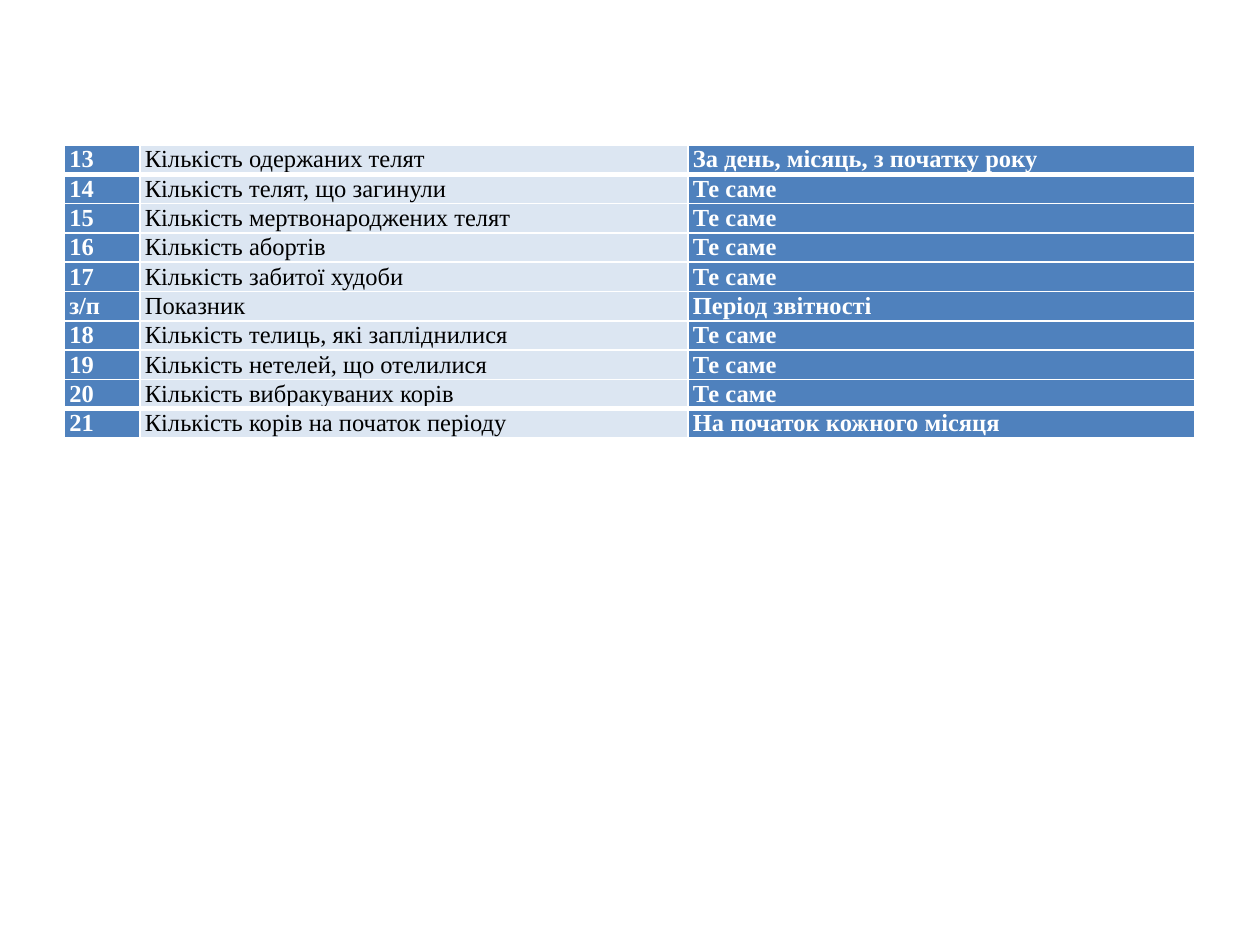
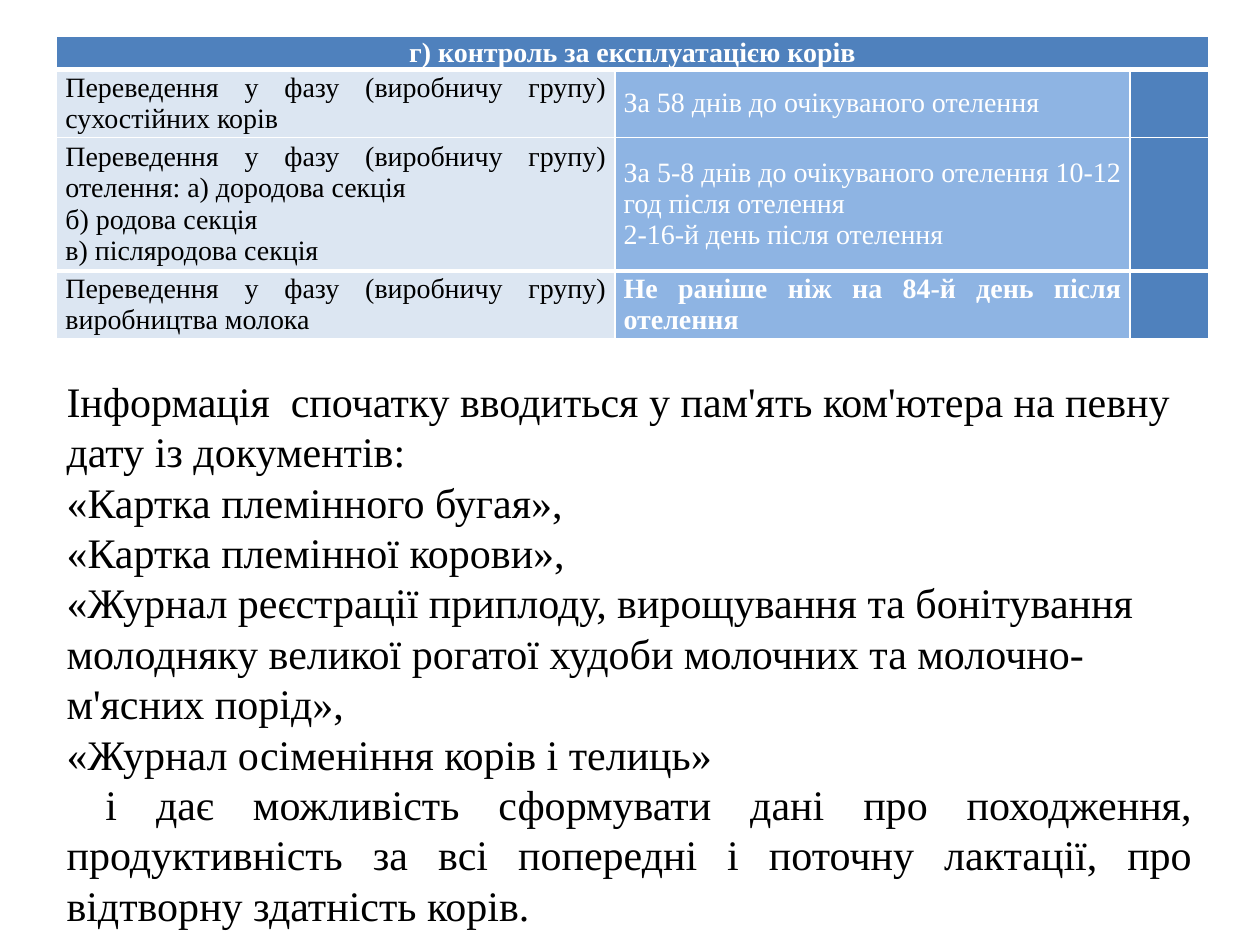
from lxml.etree import SubElement
from pptx import Presentation
from pptx.dml.color import RGBColor
from pptx.enum.text import MSO_ANCHOR, MSO_AUTO_SIZE, PP_ALIGN
from pptx.oxml.ns import qn
from pptx.util import Inches, Pt

# Shared look
FONT = "Times New Roman"
WHITE, BLACK = "FFFFFF", "000000"
BLUE, PALE, SKY = "4F81BD", "DCE6F2", "8EB4E3"
THIN, THICK = 1, 3


def write(frame, text, align, **formats):
    """Put each line of the text in its own paragraph."""
    color = RGBColor.from_string(formats.pop("color"))
    for index, line in enumerate(text.split("\n")):
        para = frame.paragraphs[0] if index == 0 else frame.add_paragraph()
        para.alignment = align
        span = para.add_run()
        span.text = line
        span.font.color.rgb = color
        for name, value in formats.items():
            setattr(span.font, name, value)


def add_grid(page, left, top, widths, heights, rows, fills, inset, size, is_bold):
    """Add a white-ruled table with thick rules below the first and above the last row."""
    table = page.shapes.add_table(
        len(rows), len(widths), Inches(left), Inches(top),
        Inches(sum(widths)), Inches(sum(heights))).table
    for column, width in zip(table.columns, widths):
        column.width = Inches(width)
    for row, height in zip(table.rows, heights):
        row.height = Inches(height)
    last = len(rows) - 1
    for r, texts in enumerate(rows):
        for c, text in enumerate(texts):
            cell = table.cell(r, c)
            layout = {"vertical_anchor": MSO_ANCHOR.MIDDLE,
                      "margin_left": Inches(inset), "margin_right": Inches(inset),
                      "margin_top": 0, "margin_bottom": 0}
            for name, value in layout.items():
                setattr(cell, name, value)
            fill = fills(r, c)
            cell.fill.solid()
            cell.fill.fore_color.rgb = RGBColor.from_string(fill)
            if text:
                write(cell.text_frame, text, PP_ALIGN.JUSTIFY, name=FONT, size=Pt(size),
                      bold=is_bold(r, c), color=BLACK if fill == PALE else WHITE)
            # Cell borders stand before the fill
            properties = cell._tc.get_or_add_tcPr()
            borders = {"a:lnL": THIN, "a:lnR": THIN,
                       "a:lnT": THICK if r in (1, last) else THIN,
                       "a:lnB": THICK if r in (0, last - 1) else THIN}
            for position, (tag, width) in enumerate(borders.items()):
                line = SubElement(properties, qn(tag), w=str(Pt(width)))
                solid = SubElement(line, qn("a:solidFill"))
                SubElement(solid, qn("a:srgbClr"), val=WHITE)
                properties.insert(position, line)
    return table


deck = Presentation()
deck.slide_width, deck.slide_height = Inches(10), Inches(7.5)
blank = deck.slide_layouts[6]

# Slide 1: reporting indicators
page = deck.slides.add_slide(blank)
SAME = "Те саме"
indicators = [
    ("13", "Кількість одержаних телят", "За день, місяць, з початку року"),
    ("14", "Кількість телят, що загинули", SAME),
    ("15", "Кількість мертвонароджених телят", SAME),
    ("16", "Кількість абортів", SAME),
    ("17", "Кількість забитої худоби", SAME),
    ("з/п", "Показник", "Період звітності"),
    ("18", "Кількість телиць, які запліднилися", SAME),
    ("19", "Кількість нетелей, що отелилися", SAME),
    ("20", "Кількість вибракуваних корів", SAME),
    ("21", "Кількість корів на початок періоду", "На початок кожного місяця"),
]
add_grid(page, 0.51, 1.15, [0.6, 4.35, 4.02], [2.33 / len(indicators)] * len(indicators),
         indicators, lambda r, c: PALE if c == 1 else BLUE, 0.04, 14,
         lambda r, c: c != 1)

# Slide 2: control of cow use
page = deck.slides.add_slide(blank)
PHASE = "Переведення у фазу (виробничу групу) "
phases = [
    ("г) контроль за експлуатацією корів", "", ""),
    (PHASE + "сухостійних корів", "За 58 днів до очікуваного отелення", ""),
    (PHASE + "отелення: а) дородова секція\nб) родова секція\nв) післяродова секція",
     "За 5-8 днів до очікуваного отелення 10-12 год після отелення\n"
     "2-16-й день після отелення", ""),
    (PHASE + "виробництва молока", "Не раніше ніж на 84-й день після отелення", ""),
]
table = add_grid(page, 0.45, 0.29, [4.43, 4.09, 0.62], [0.26, 0.54, 1.06, 0.54], phases,
                 lambda r, c: BLUE if r == 0 else (PALE, SKY, BLUE)[c], 0.07, 16,
                 lambda r, c: (r, c) in ((0, 0), (3, 1)))
heading = table.cell(0, 0)
heading.merge(table.cell(0, 2))
heading.text_frame.paragraphs[0].alignment = PP_ALIGN.CENTER

# Source documents below the table
box = page.shapes.add_textbox(Inches(0.43), Inches(2.93), Inches(9.13), Inches(4.54))
frame = box.text_frame
frame.word_wrap = True
frame.auto_size = MSO_AUTO_SIZE.SHAPE_TO_FIT_TEXT
documents = """Інформація  спочатку вводиться у пам'ять ком'ютера на певну дату із документів:
«Картка племінного бугая»,
«Картка племінної корови»,
«Журнал реєстрації приплоду, вирощування та бонітування молодняку великої рогатої худоби молочних та молочно-м'ясних порід»,
«Журнал осіменіння корів і телиць»
 і дає можливість сформувати дані про походження, продуктивність за всі попередні і поточну лактації, про відтворну здатність корів."""
write(frame, documents, PP_ALIGN.LEFT, name=FONT, size=Pt(24), color=BLACK)
frame.paragraphs[-1].alignment = PP_ALIGN.JUSTIFY

deck.save("out.pptx")
